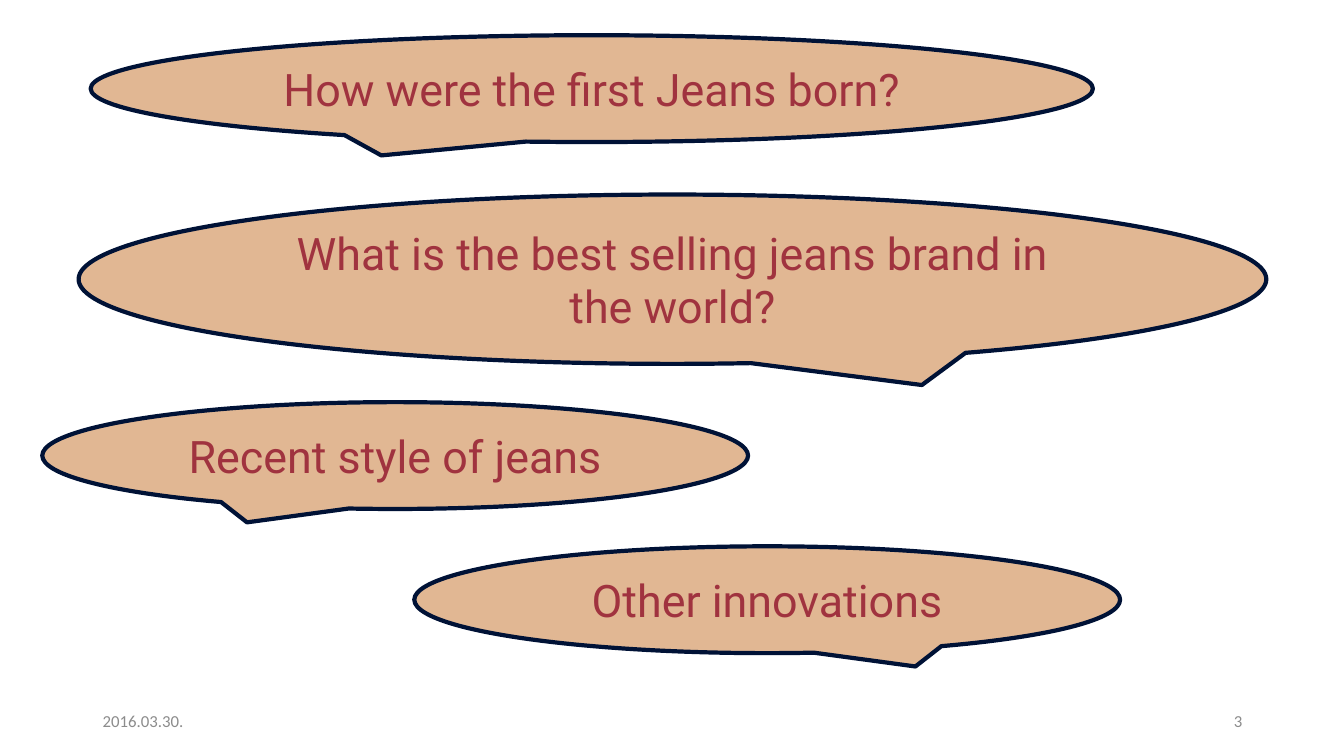
import pptx
import pptx.util
import pptx.dml.color
import pptx.enum.shapes
import pptx.enum.text

RGB = pptx.dml.color.RGBColor
ALIGN = pptx.enum.text.PP_ALIGN
MIDDLE = pptx.enum.text.MSO_ANCHOR.MIDDLE
BUBBLE = pptx.enum.shapes.MSO_SHAPE.OVAL_CALLOUT

SAND = RGB(0xE1, 0xB7, 0x93)
NAVY = RGB(0x00, 0x12, 0x36)
WINE = RGB(0xA0, 0x33, 0x3F)
GREY = RGB(0x8C, 0x8C, 0x8C)

SCALE = 9144  # EMU in one px, at 100 px to the inch
TAIL = 0.21   # tail tip from the centre, as a share of the width


def px(*nums):
    return [pptx.util.Emu(num * SCALE) for num in nums]


class Page:
    def __init__(self, deck):
        self.slide = deck.slides.add_slide(deck.slide_layouts[6])

    def label(self, shape, text, font, size, color, align):
        frame = shape.text_frame
        frame.word_wrap = True
        frame.vertical_anchor = MIDDLE
        para = frame.paragraphs[0]
        para.alignment = align
        run = para.add_run()
        run.text = text
        run.font.name = font
        run.font.size = pptx.util.Pt(size)
        run.font.color.rgb = color

    def bubble(self, text, box, side):
        """Draw a speech bubble; side is -1 for a tail on the left, 1 for the right."""
        shape = self.slide.shapes.add_shape(BUBBLE, *px(*box))
        shape.adjustments[0] = side * TAIL
        shape.shadow.inherit = False
        shape.fill.solid()
        shape.fill.fore_color.rgb = SAND
        shape.line.color.rgb = NAVY
        shape.line.width = pptx.util.Pt(3)
        self.label(shape, text, "Roboto", 32, WINE, ALIGN.CENTER)

    def footer(self, text, left, align):
        shape = self.slide.shapes.add_textbox(*px(left, 695, 300, 40))
        self.label(shape, text, "Calibri", 12, GREY, align)


def main():
    deck = pptx.Presentation()
    deck.slide_width, deck.slide_height = px(1333, 750)
    page = Page(deck)
    for text, box, side in (
        ("Other innovations", (411, 542, 700, 106), 1),
        ("What is the best selling jeans brand in the world?", (78, 193, 1178, 168), 1),
        ("Recent style of jeans", (42, 399, 700, 106), -1),
        ("How were the first Jeans born?", (90, 35, 994, 106), -1),
    ):
        page.bubble(text, box, side)
    page.footer("2016.03.30.", 92, ALIGN.LEFT)
    page.footer("3", 942, ALIGN.RIGHT)
    deck.save("out.pptx")


if __name__ == "__main__":
    main()
